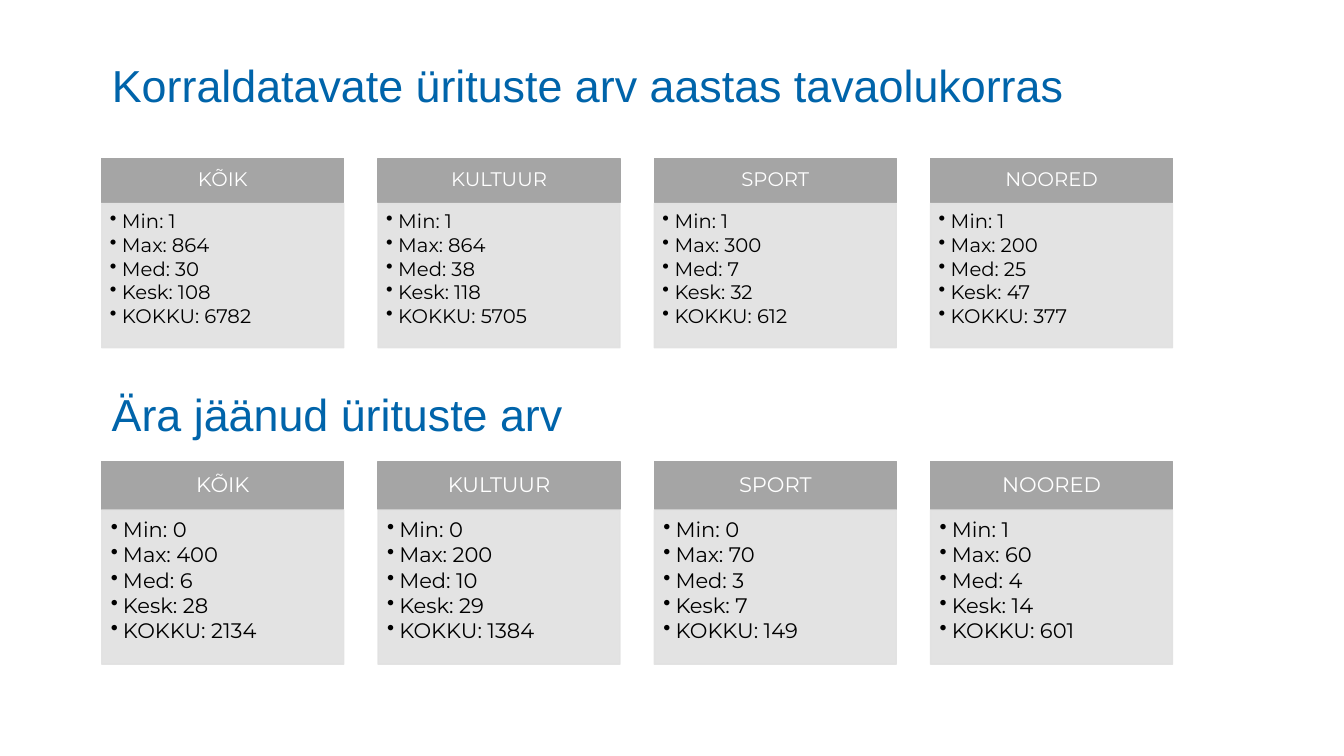
import pptx
import pptx.dml.color
import pptx.enum.shapes
import pptx.enum.text
import pptx.oxml.ns
import pptx.util
from lxml import etree

Inches = pptx.util.Inches
Pt = pptx.util.Pt
Align = pptx.enum.text.PP_ALIGN
Anchor = pptx.enum.text.MSO_ANCHOR

# Content
GROUPS = ["KÕIK", "KULTUUR", "SPORT", "NOORED"]
MEASURES = ["Min", "Max", "Med", "Kesk", "KOKKU"]
SECTIONS = [
    {
        "heading": "Korraldatavate ürituste arv aastas tavaolukorras",
        "heading_top": 0.47, "top": 1.57, "header_height": 0.44, "body_height": 1.43,
        "size": 14, "header_insets": (0.11, 0.06, 0.11, 0.06),
        "body_insets": (0.08, 0.08, 0.11, 0.12),
        "values": [(1, 864, 30, 108, 6782), (1, 864, 38, 118, 5705),
                   (1, 300, 7, 32, 612), (1, 200, 25, 47, 377)],
    },
    {
        "heading": "Ära jäänud ürituste arv",
        "heading_top": 3.74, "top": 4.58, "header_height": 0.47, "body_height": 1.53,
        "size": 15, "header_insets": (0.12, 0.07, 0.12, 0.07),
        "body_insets": (0.09, 0.09, 0.12, 0.13),
        "values": [(0, 400, 6, 28, 2134), (0, 200, 10, 29, 1384),
                   (0, 70, 3, 7, 149), (1, 60, 4, 14, 601)],
    },
]

# Layout and colours
LEFT, CARD_WIDTH, CARD_STEP = 1.01, 2.4, 2.74
HEADING_WIDTH, HEADING_HEIGHT = 11.5, 1.04
BLUE, GREY, LIGHT, WHITE, BLACK = "0064AA", "A5A5A5", "E1E1E1", "FFFFFF", "000000"
BULLET_INDENT = 0.12


def color(value):
    return pptx.dml.color.RGBColor.from_string(value)


def set_attributes(target, values):
    for name, value in values.items():
        setattr(target, name, value)


def format_frame(frame, insets, anchor):
    left, top, right, bottom = map(Inches, insets)
    set_attributes(frame, {
        "word_wrap": True, "vertical_anchor": anchor,
        "margin_left": left, "margin_top": top,
        "margin_right": right, "margin_bottom": bottom,
    })


def format_font(paragraph, name, size, value):
    set_attributes(paragraph.font, {"name": name, "size": Pt(size)})
    paragraph.font.color.rgb = color(value)


def add_bullet(paragraph):
    properties = paragraph._p.get_or_add_pPr()
    properties.set("marL", str(Inches(BULLET_INDENT)))
    properties.set("indent", str(-Inches(BULLET_INDENT)))
    etree.SubElement(properties, pptx.oxml.ns.qn("a:buChar")).set("char", "•")


def set_opacity(shape, percent):
    for node in list(shape.element.spPr.iter(pptx.oxml.ns.qn("a:srgbClr"))):
        etree.SubElement(node, pptx.oxml.ns.qn("a:alpha")).set("val", str(percent * 1000))


def fill_heading(shape, section):
    set_attributes(shape, {
        "left": Inches(LEFT), "top": Inches(section["heading_top"]),
        "width": Inches(HEADING_WIDTH), "height": Inches(HEADING_HEIGHT),
    })
    frame = shape.text_frame
    format_frame(frame, (0.1, 0.1, 0.1, 0.05), Anchor.TOP)
    frame.text = section["heading"]
    frame.paragraphs[0].alignment = Align.LEFT
    format_font(frame.paragraphs[0], "Arial", 32, BLUE)


def add_panel(slide, left, top, height, fill, insets, anchor):
    shape = slide.shapes.add_shape(
        pptx.enum.shapes.MSO_SHAPE.RECTANGLE,
        Inches(left), Inches(top), Inches(CARD_WIDTH), Inches(height))
    shape.shadow.inherit = False
    shape.fill.solid()
    shape.fill.fore_color.rgb = color(fill)
    shape.line.color.rgb = color(fill)
    shape.line.width = Pt(1)
    format_frame(shape.text_frame, insets, anchor)
    return shape


def add_card(slide, section, column):
    left = LEFT + column * CARD_STEP
    size = section["size"]

    # Header band
    header = add_panel(slide, left, section["top"], section["header_height"], GREY,
                       section["header_insets"], Anchor.MIDDLE)
    header.text_frame.text = GROUPS[column]
    paragraph = header.text_frame.paragraphs[0]
    set_attributes(paragraph, {"alignment": Align.CENTER, "line_spacing": 0.9})
    format_font(paragraph, "Montserrat", size, WHITE)

    # Bulleted figures
    body_top = section["top"] + section["header_height"] + 0.01
    body = add_panel(slide, left, body_top, section["body_height"], LIGHT,
                     section["body_insets"], Anchor.TOP)
    set_opacity(body, 90)
    lines = [f"{measure}: {value}"
             for measure, value in zip(MEASURES, section["values"][column])]
    body.text_frame.text = "\n".join(lines)
    for paragraph in body.text_frame.paragraphs:
        set_attributes(paragraph, {
            "level": 1, "alignment": Align.LEFT,
            "line_spacing": 0.9, "space_after": Pt(0.13 * size),
        })
        add_bullet(paragraph)
        format_font(paragraph, "Montserrat", size, BLACK)


def main():
    presentation = pptx.Presentation()
    presentation.slide_width = Inches(13.33)
    presentation.slide_height = Inches(7.5)
    slide = presentation.slides.add_slide(presentation.slide_layouts[5])

    for index, section in enumerate(SECTIONS):
        if index == 0:
            heading = slide.shapes.title
        else:
            heading = slide.shapes.add_textbox(0, 0, 0, 0)
        fill_heading(heading, section)
        for column in range(len(GROUPS)):
            add_card(slide, section, column)

    presentation.save("out.pptx")


if __name__ == "__main__":
    main()
